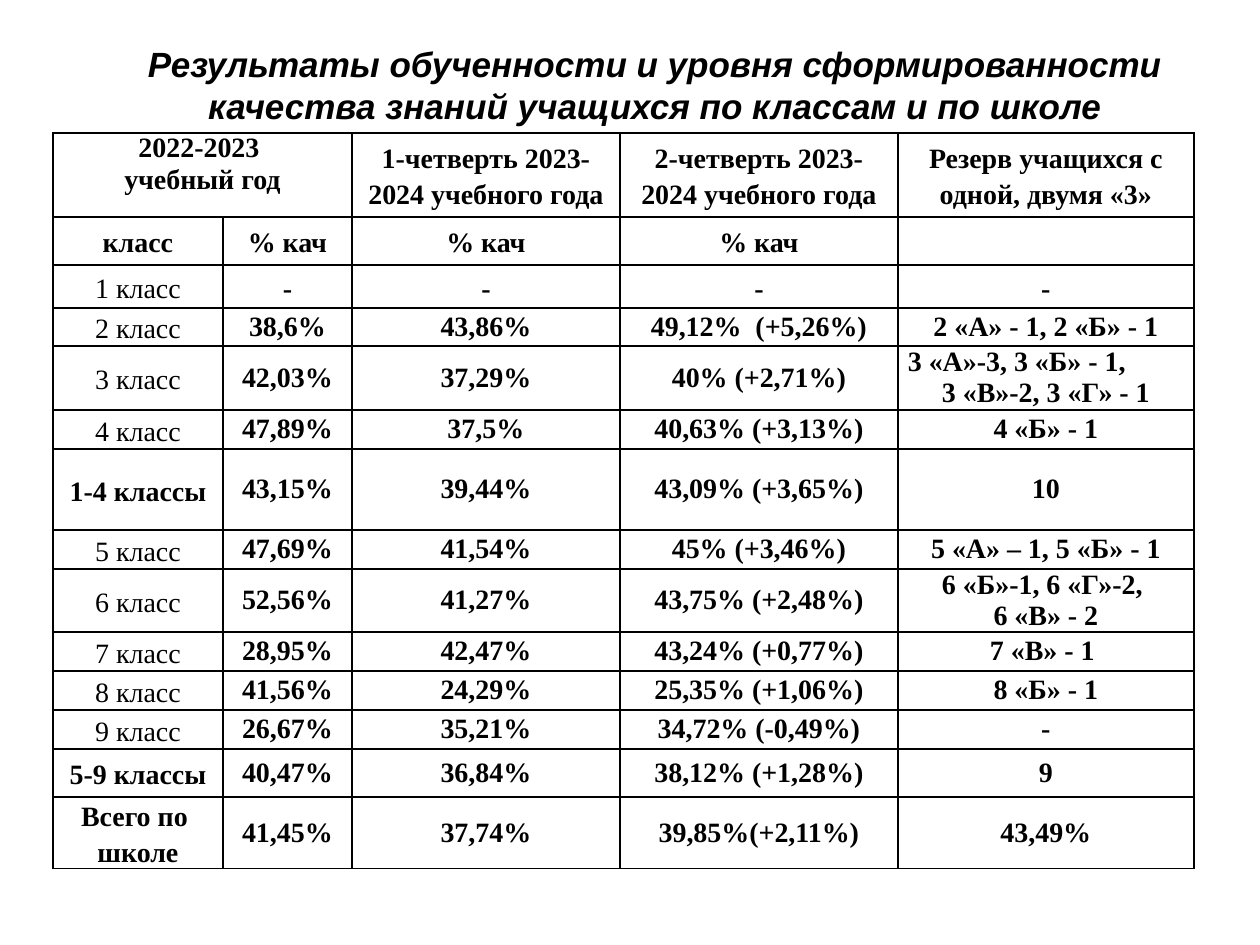
"""Build a slide with a school results table by class and quarter."""
from dataclasses import dataclass

import lxml.etree
import pptx
import pptx.dml.color
import pptx.enum.text
import pptx.oxml.ns
import pptx.util

EMU_PER_PX = 914400 / 126
BLACK = "000000"
CENTER = pptx.enum.text.PP_ALIGN.CENTER
LEFT = pptx.enum.text.PP_ALIGN.LEFT
TOP = pptx.enum.text.MSO_ANCHOR.TOP
MIDDLE = pptx.enum.text.MSO_ANCHOR.MIDDLE
COLUMN_WIDTHS = (170, 129, 268, 278, 296)
TABLE_LEFT, TABLE_TOP = 53, 133
RESERVE_INDENT = 9


@dataclass(frozen=True)
class ResultRow:
    height: int
    texts: tuple[str, ...]
    bold_label: bool = False


@dataclass(frozen=True)
class CellStyle:
    side_inset: int = 1
    end_inset: int = 0
    spacing: float = 1.0
    bold: bool = True
    anchor: pptx.enum.text.MSO_ANCHOR = MIDDLE


ROWS = (
    ResultRow(84, ("2022-2023 \nучебный год", "", "1-четверть 2023-2024 учебного года",
                   "2-четверть 2023-2024 учебного года", "Резерв учащихся с одной, двумя «3»"), True),
    ResultRow(48, ("класс", "% кач", "% кач", "% кач", ""), True),
    ResultRow(43, ("1 класс", "-", "-", "-", "-")),
    ResultRow(38, ("2 класс", "38,6%", "43,86%", "49,12%  (+5,26%)", "2 «А» - 1, 2 «Б» - 1")),
    ResultRow(64, ("3 класс", "42,03%", "37,29%", "40% (+2,71%)", "3 «А»-3, 3 «Б» - 1,\n3 «В»-2, 3 «Г» - 1")),
    ResultRow(39, ("4 класс", "47,89%", "37,5%", "40,63% (+3,13%)", "4 «Б» - 1")),
    ResultRow(81, ("1-4 классы", "43,15%", "39,44%", "43,09% (+3,65%)", "10"), True),
    ResultRow(39, ("5 класс", "47,69%", "41,54%", "45% (+3,46%)", "5 «А» – 1, 5 «Б» - 1")),
    ResultRow(63, ("6 класс", "52,56%", "41,27%", "43,75% (+2,48%)", "6 «Б»-1, 6 «Г»-2, \n6 «В» - 2")),
    ResultRow(39, ("7 класс", "28,95%", "42,47%", "43,24% (+0,77%)", "7 «В» - 1 ")),
    ResultRow(39, ("8 класс", "41,56%", "24,29%", "25,35% (+1,06%)", "8 «Б» - 1")),
    ResultRow(39, ("9 класс", "26,67%", "35,21%", "34,72% (-0,49%)", "-")),
    ResultRow(48, ("5-9 классы", "40,47%", "36,84%", "38,12% (+1,28%)", "9"), True),
    ResultRow(71, ("Всего по \nшколе", "41,45%", "37,74%", "39,85%(+2,11%)", "43,49%"), True),
)
HEADER_ROW, CLASS_THREE_ROW, TOTAL_ROW = 0, 4, len(ROWS) - 1
RESERVE_COLUMN = len(COLUMN_WIDTHS) - 1


def px(length: int) -> pptx.util.Emu:
    """Turn pixels into EMU."""
    return pptx.util.Emu(round(length * EMU_PER_PX))


def color(value: str) -> pptx.dml.color.RGBColor:
    """Turn a hex string into a colour."""
    return pptx.dml.color.RGBColor.from_string(value)


def set_font(paragraph, name: str, size: int, bold: bool, italic: bool = False) -> None:
    """Set the font of a whole paragraph."""
    font = paragraph.font
    font.name, font.size = name, pptx.util.Pt(size)
    font.bold, font.italic = bold, italic
    font.color.rgb = color(BLACK)


def add_borders(cell) -> None:
    """Draw a thin solid line on every side of a cell."""
    properties = cell._tc.get_or_add_tcPr()
    qn = pptx.oxml.ns.qn
    for position, side in enumerate(("a:lnL", "a:lnR", "a:lnT", "a:lnB")):
        line = lxml.etree.Element(qn(side), w=str(pptx.util.Pt(1)))
        fill = lxml.etree.SubElement(line, qn("a:solidFill"))
        lxml.etree.SubElement(fill, qn("a:srgbClr"), val=BLACK)
        properties.insert(position, line)


def style_for(row: int, column: int) -> CellStyle:
    """Choose the style of a cell from its place in the table."""
    if row == HEADER_ROW:
        if column < 2:
            return CellStyle(side_inset=9, anchor=TOP)
        return CellStyle(side_inset=13, end_inset=6, spacing=1.15, anchor=TOP)
    if column == 0:
        anchor = TOP if row == TOTAL_ROW else MIDDLE
        return CellStyle(side_inset=9, spacing=1.15, bold=ROWS[row].bold_label, anchor=anchor)
    if row < CLASS_THREE_ROW:
        return CellStyle(side_inset=9, spacing=1.15 if row < 3 else 1.0)
    return CellStyle()


def fill_cell(cell, text: str, style: CellStyle) -> None:
    """Write the text of one cell and format it."""
    cell.fill.background()
    add_borders(cell)
    cell.margin_left = cell.margin_right = px(style.side_inset)
    cell.margin_top = cell.margin_bottom = px(style.end_inset)
    cell.vertical_anchor = style.anchor
    cell.text = text
    for paragraph in cell.text_frame.paragraphs:
        paragraph.alignment = CENTER
        paragraph.line_spacing = style.spacing
        set_font(paragraph, "Times New Roman", 16, style.bold)


def add_results_table(slide) -> None:
    """Add the table of results."""
    results = slide.shapes.add_table(
        len(ROWS), len(COLUMN_WIDTHS), px(TABLE_LEFT), px(TABLE_TOP),
        px(sum(COLUMN_WIDTHS)), px(sum(row.height for row in ROWS))).table
    results.first_row = results.horz_banding = False
    for column, width in zip(results.columns, COLUMN_WIDTHS):
        column.width = px(width)
    for row_index, row in enumerate(ROWS):
        results.rows[row_index].height = px(row.height)
        for column_index, text in enumerate(row.texts):
            fill_cell(results.cell(row_index, column_index), text, style_for(row_index, column_index))
    results.cell(HEADER_ROW, 0).merge(results.cell(HEADER_ROW, 1))
    first_reserve = results.cell(CLASS_THREE_ROW, RESERVE_COLUMN).text_frame.paragraphs[0]
    first_reserve.alignment = LEFT
    first_reserve._p.get_or_add_pPr().set("marL", str(px(RESERVE_INDENT)))


def add_title(slide) -> None:
    """Add the heading above the table."""
    frame = slide.shapes.add_textbox(px(84), px(36), px(1142), px(97)).text_frame
    frame.word_wrap = True
    frame.auto_size = pptx.enum.text.MSO_AUTO_SIZE.SHAPE_TO_FIT_TEXT
    heading = frame.paragraphs[0]
    heading.text = ("Результаты обученности и уровня сформированности "
                    "качества знаний учащихся по классам и по школе")
    heading.alignment = CENTER
    set_font(heading, "Arial", 20, bold=True, italic=True)


def main() -> None:
    """Build and save the presentation."""
    presentation = pptx.Presentation()
    presentation.slide_width, presentation.slide_height = px(1260), px(945)
    slide = presentation.slides.add_slide(presentation.slide_layouts[6])
    add_results_table(slide)
    add_title(slide)
    presentation.save("out.pptx")


if __name__ == "__main__":
    main()
